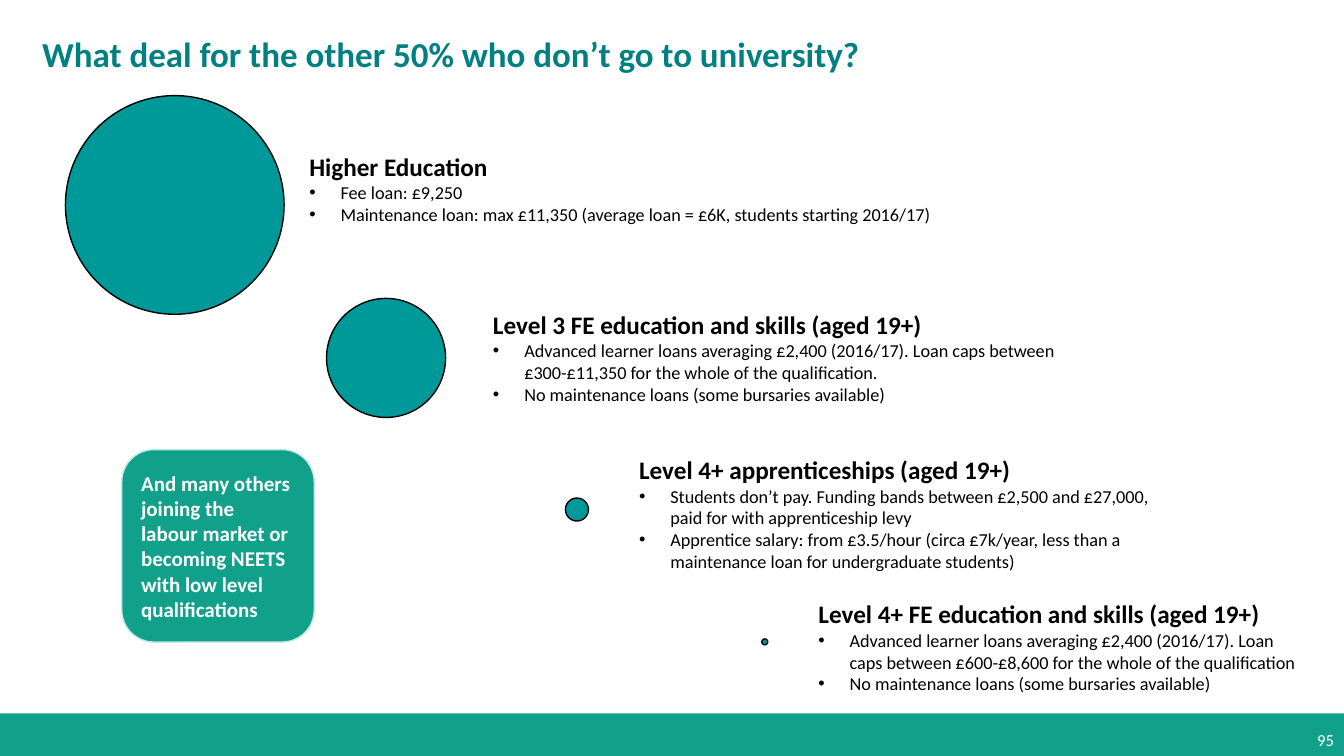
from pptx import Presentation
from pptx.dml.color import RGBColor
from pptx.enum.shapes import MSO_SHAPE as SHAPE
from pptx.enum.text import MSO_ANCHOR as ANCHOR, MSO_AUTO_SIZE as AUTO, PP_ALIGN as ALIGN
from pptx.oxml.ns import qn
from pptx.util import Cm, Pt
from lxml import etree

TITLE = "What deal for the other 50% who don’t go to university?"
ROUTES = [
    {"head": "Higher Education",
     "points": ["Fee loan: £9,250",
                "Maintenance loan: max £11,350 (average loan = £6K, students starting 2016/17)"],
     "circle": (1.65, 2.41, 5.51), "box": (7.54, 3.68, 17.37, 2.13)},
    {"head": "Level 3 FE education and skills (aged 19+)",
     "points": ["Advanced learner loans averaging £2,400 (2016/17). Loan caps between "
                "£300-£11,350 for the whole of the qualification.",
                "No maintenance loans (some bursaries available)"],
     "circle": (8.23, 7.52, 3), "box": (12.17, 7.67, 15.8, 2.69)},
    {"head": "Level 4+ apprenticeships (aged 19+)",
     "points": ["Students don’t pay. Funding bands between £2,500 and £27,000, "
                "paid for with apprenticeship levy",
                "Apprentice salary: from £3.5/hour (circa £7k/year, less than a "
                "maintenance loan for undergraduate students)"],
     "circle": (14.25, 12.55, 0.58), "box": (15.85, 11.33, 14.15, 3.25)},
    {"head": "Level 4+ FE education and skills (aged 19+)",
     "points": ["Advanced learner loans averaging £2,400 (2016/17). Loan caps between "
                "£600-£8,600 for the whole of the qualification",
                "No maintenance loans (some bursaries available)"],
     "circle": (19.2, 16.1, 0.15), "box": (20.37, 14.96, 12.8, 2.69)},
]
OTHERS = ("And many others joining the labour market or becoming NEETS "
          "with low level qualifications")
PAGE = "95"
GREEN, TEAL = "11A08A", "009999"
WIDTH, HEIGHT, FOOTER = 33.87, 19.05, 1.07
INDENT = 0.79


def rgb(value):
    return RGBColor.from_string(value)


def place(sp, left, top, width, height):
    sp.left, sp.top, sp.width, sp.height = map(Cm, (left, top, width, height))


def add_shape(s, kind, box, fill, line=None):
    sp = s.shapes.add_shape(kind, *map(Cm, box))
    sp.shadow.inherit = False
    sp.fill.solid()
    sp.fill.fore_color.rgb = rgb(fill)
    if line:
        sp.line.color.rgb = rgb(line)
        sp.line.width = Pt(1)
    else:
        sp.line.fill.background()
    return sp


def set_frame(sp, anchor):
    tf = sp.text_frame
    tf.word_wrap = True
    tf.auto_size = AUTO.NONE
    tf.vertical_anchor = anchor
    return tf


def style(p, size, color, bold=False, align=ALIGN.LEFT):
    p.alignment = align
    p.space_before = p.space_after = Pt(0)
    for r in p.runs:
        r.font.name = "Calibri"
        r.font.size = Pt(size)
        r.font.bold = bold
        r.font.color.rgb = rgb(color)


def set_bullet(p, char=None):
    pPr = p._p.get_or_add_pPr()
    indent = Cm(INDENT) if char else 0
    pPr.set("marL", str(indent))
    pPr.set("indent", str(-indent))
    if char:
        etree.SubElement(pPr, qn("a:buFont"), typeface="Arial")
        etree.SubElement(pPr, qn("a:buChar"), char=char)
    else:
        etree.SubElement(pPr, qn("a:buNone"))


def fill_list(sp, route):
    place(sp, *route["box"])
    tf = set_frame(sp, ANCHOR.TOP)
    tf.text = "\n".join([route["head"], *route["points"]])
    head, *points = tf.paragraphs
    style(head, 18, "000000", bold=True)
    set_bullet(head)
    for p in points:
        style(p, 13, "000000")
        set_bullet(p, "•")


def main():
    prs = Presentation()
    prs.slide_width, prs.slide_height = Cm(WIDTH), Cm(HEIGHT)
    s = prs.slides.add_slide(prs.slide_layouts.get_by_name("Comparison"))
    title, *bodies = s.placeholders

    place(title, 0.81, 0.69, 29.4, 1.32)
    tf = set_frame(title, ANCHOR.TOP)
    tf.text = TITLE
    style(tf.paragraphs[0], 25, "008080", bold=True)

    add_shape(s, SHAPE.RECTANGLE, (0, HEIGHT - FOOTER, WIDTH, FOOTER), GREEN)
    for body, route in zip(bodies, ROUTES):
        left, top, size = route["circle"]
        add_shape(s, SHAPE.OVAL, (left, top, size, size), TEAL, "000000")
        fill_list(body, route)

    others = add_shape(s, SHAPE.ROUNDED_RECTANGLE, (3.07, 11.33, 4.85, 4.85), GREEN, "C4E7E2")
    tf = set_frame(others, ANCHOR.MIDDLE)
    tf.text = OTHERS
    style(tf.paragraphs[0], 15, "FFFFFF", bold=True)

    number = s.shapes.add_textbox(Cm(26.25), Cm(18.14), Cm(7.62), Cm(1.02))
    tf = set_frame(number, ANCHOR.MIDDLE)
    tf.text = PAGE
    style(tf.paragraphs[0], 12, "FFFFFF", align=ALIGN.RIGHT)

    prs.save("out.pptx")


if __name__ == "__main__":
    main()
